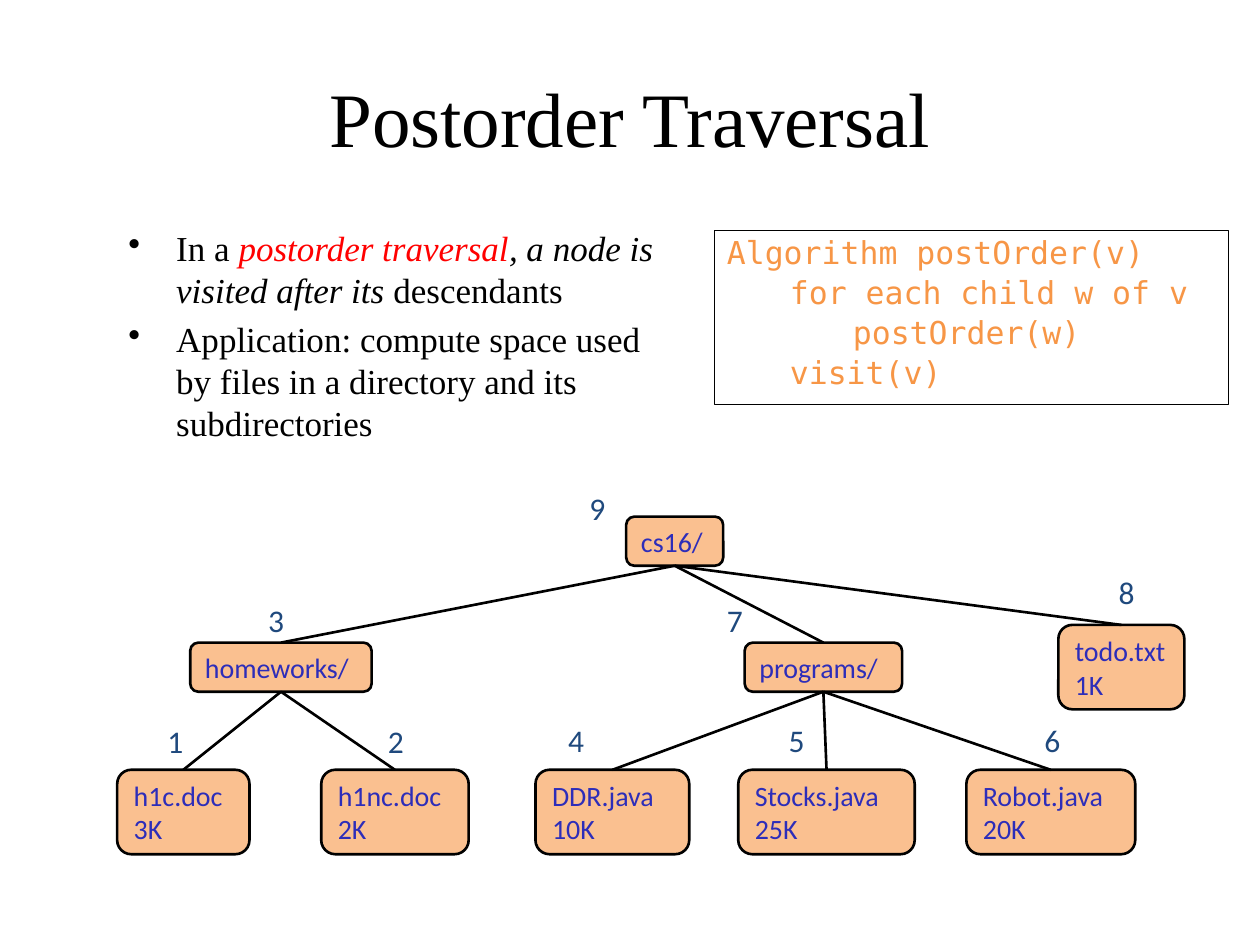
from dataclasses import dataclass, field
from itertools import count

from lxml.etree import SubElement
from pptx import Presentation
from pptx.dml.color import RGBColor
from pptx.enum.shapes import MSO_CONNECTOR, MSO_SHAPE
from pptx.enum.text import MSO_ANCHOR, MSO_AUTO_SIZE, PP_ALIGN
from pptx.oxml.ns import qn
from pptx.util import Inches, Pt

SERIF, MONO, SANS = "Times New Roman", "DejaVu Sans Mono", "Calibri"
BLACK, RED, ORANGE = "000000", "FF0000", "F79646"
PEACH, INDIGO, NAVY = "FAC090", "2D2DB9", "1F497D"


@dataclass
class Node:
    text: str
    left: float
    top: float
    width: float
    number_left: float
    number_top: float
    children: list = field(default_factory=list)


TREE = Node("cs16/", 4.04, 0.27, 0.77, 3.65, 0, [
    Node("homeworks/", 0.58, 1.27, 1.44, 1.1, 0.89, [
        Node("h1c.doc\v3K", 0, 2.28, 1.05, 0.3, 1.85),
        Node("h1nc.doc\v2K", 1.62, 2.28, 1.17, 2.05, 1.85),
    ]),
    Node("programs/", 4.98, 1.27, 1.25, 4.74, 0.89, [
        Node("DDR.java\v10K", 3.32, 2.28, 1.22, 3.48, 1.84),
        Node("Stocks.java\v25K", 4.93, 2.28, 1.4, 5.23, 1.84),
        Node("Robot.java\v20K", 6.74, 2.28, 1.34, 7.26, 1.84),
    ]),
    Node("todo.txt\v1K", 7.47, 1.13, 1, 7.85, 0.67),
])

BULLETS = [
    [("In a ", BLACK, False), ("postorder traversal", RED, True),
     (", a node is visited after its ", BLACK, True), ("descendants", BLACK, False)],
    [("Application: compute space used by files in a directory and its subdirectories",
      BLACK, False)],
]

CODE = [
    (0, "Algorithm postOrder(v)"),
    (1, "for each child w of v"),
    (1, "\tpostOrder(w)"),
    (1, "visit(v)"),
]


def color(value):
    return RGBColor.from_string(value)


def set_font(font, name, size, value):
    font.name = name
    font.size = Pt(size)
    font.color.rgb = color(value)


def set_line(shape, width):
    shape.line.color.rgb = color(BLACK)
    shape.line.width = Pt(width)


def set_indent(paragraph, left, first):
    properties = paragraph._p.get_or_add_pPr()
    properties.set("marL", str(Inches(left)))
    properties.set("indent", str(Inches(first)))
    return properties


def add_title(slide, left, top, width, height):
    title = slide.shapes.title
    title.left, title.top = Inches(left), Inches(top)
    title.width, title.height = Inches(width), Inches(height)
    title.text_frame.text = "Postorder Traversal"
    title.text_frame.vertical_anchor = MSO_ANCHOR.MIDDLE
    paragraph = title.text_frame.paragraphs[0]
    paragraph.alignment = PP_ALIGN.CENTER
    set_font(paragraph.font, SERIF, 44, BLACK)


def add_bullets(slide, left, top, width, height):
    frame = slide.shapes.add_textbox(
        Inches(left), Inches(top), Inches(width), Inches(height)).text_frame
    frame.word_wrap = True
    for index, runs in enumerate(BULLETS):
        paragraph = frame.add_paragraph() if index else frame.paragraphs[0]
        paragraph.space_before = Pt(4)
        properties = set_indent(paragraph, 0.38, -0.38)
        SubElement(properties, qn("a:buChar")).set("char", "•")
        for text, value, italic in runs:
            run = paragraph.add_run()
            run.text = text
            run.font.italic = italic
            set_font(run.font, SERIF, 20, value)


def add_code(slide, left, top, width, height):
    box = slide.shapes.add_shape(
        MSO_SHAPE.RECTANGLE, Inches(left), Inches(top), Inches(width), Inches(height))
    box.shadow.inherit = False
    box.fill.background()
    set_line(box, 0.75)
    frame = box.text_frame
    frame.word_wrap = True
    frame.vertical_anchor = MSO_ANCHOR.TOP
    for index, (level, text) in enumerate(CODE):
        paragraph = frame.add_paragraph() if index else frame.paragraphs[0]
        paragraph.text = text
        paragraph.level = level
        paragraph.alignment = PP_ALIGN.LEFT
        paragraph.line_spacing = 0.9
        paragraph.space_before = Pt(3.6)
        set_indent(paragraph, level * 0.5, 0)
        set_font(paragraph.font, MONO, 18, ORANGE)


def add_label(frame, text, size, value):
    frame.word_wrap = False
    frame.auto_size = MSO_AUTO_SIZE.SHAPE_TO_FIT_TEXT
    frame.text = text
    paragraph = frame.paragraphs[0]
    paragraph.alignment = PP_ALIGN.LEFT
    set_font(paragraph.font, SANS, size, value)


def add_edge(slide, parent, child):
    edge = slide.shapes.add_connector(MSO_CONNECTOR.STRAIGHT, 0, 0, 0, 0)
    edge.begin_connect(parent, 2)
    edge.end_connect(child, 0)
    set_line(edge, 1.5)
    SubElement(edge._element.spPr, qn("a:effectLst"))


def add_tree(slide, left, top, node, visits):
    height = 0.67 if "\v" in node.text else 0.39
    box = slide.shapes.add_shape(
        MSO_SHAPE.ROUNDED_RECTANGLE, Inches(left + node.left), Inches(top + node.top),
        Inches(node.width), Inches(height))
    box.shadow.inherit = False
    box.fill.solid()
    box.fill.fore_color.rgb = color(PEACH)
    set_line(box, 1.5)
    box.text_frame.vertical_anchor = MSO_ANCHOR.MIDDLE
    add_label(box.text_frame, node.text, 16, INDIGO)
    for child in node.children:
        add_edge(slide, box, add_tree(slide, left, top, child, visits))
    number = slide.shapes.add_textbox(
        Inches(left + node.number_left), Inches(top + node.number_top),
        Inches(0.35), Inches(0.44))
    add_label(number.text_frame, str(next(visits)), 18, NAVY)
    return box


def main():
    presentation = Presentation()
    presentation.slide_width, presentation.slide_height = Inches(10), Inches(7.5)
    slide = presentation.slides.add_slide(presentation.slide_layouts[5])
    add_title(slide, 0.5, 0.3, 9, 1.25)
    add_bullets(slide, 0.92, 1.75, 4.42, 2.33)
    add_code(slide, 5.67, 1.83, 4.08, 1.38)
    add_tree(slide, 0.93, 3.83, TREE, count(1))
    presentation.save("out.pptx")


if __name__ == "__main__":
    main()
